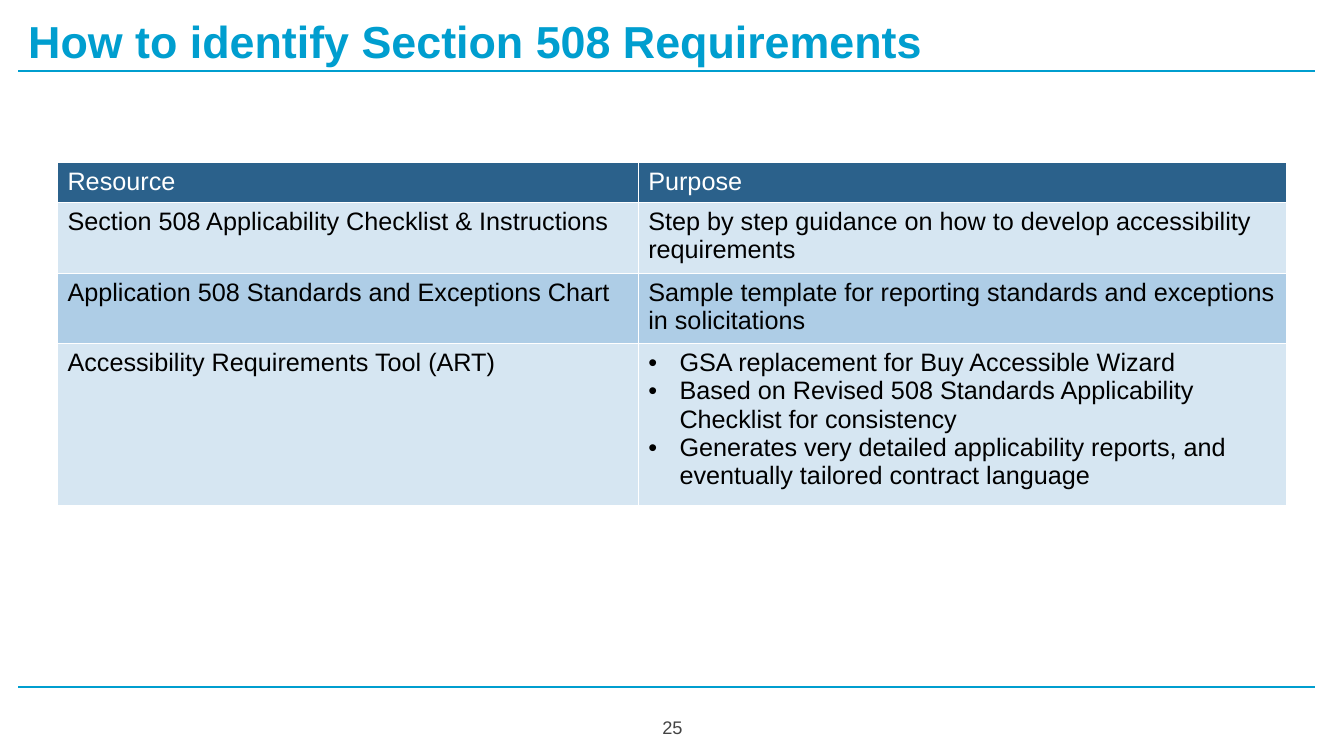
from lxml import etree
from pptx import Presentation
from pptx.dml.color import RGBColor
from pptx.enum.shapes import MSO_CONNECTOR
from pptx.enum.text import MSO_ANCHOR, PP_ALIGN
from pptx.oxml.ns import qn
from pptx.util import Inches, Pt

STRAIGHT = MSO_CONNECTOR.STRAIGHT
TOP, MIDDLE = MSO_ANCHOR.TOP, MSO_ANCHOR.MIDDLE
LEFT, CENTER = PP_ALIGN.LEFT, PP_ALIGN.CENTER

TITLE = "How to identify Section 508 Requirements"
PAGE_NUMBER = "25"
ROWS = [
    ("Resource", "Purpose"),
    ("Section 508 Applicability Checklist & Instructions",
     "Step by step guidance on how to develop accessibility requirements"),
    ("Application 508 Standards and Exceptions Chart",
     "Sample template for reporting standards and exceptions in solicitations"),
    ("Accessibility Requirements Tool (ART)",
     ["GSA replacement for Buy Accessible Wizard",
      "Based on Revised 508 Standards Applicability Checklist for consistency",
      "Generates very detailed applicability reports, and eventually tailored "
      "contract language"]),
]
COLUMN_WIDTHS = [5.76, 6.43]
ROW_HEIGHTS = [0.4, 0.66, 0.66, 1.5]
RULE_LEFT, RULE_RIGHT = 0.18, 13.04
RULE_TOPS = [0.7, 6.82]
BULLET_INDENT = 0.31
COLORS = {
    "accent": "009ECF", "number": "434343", "header": "2B618B",
    "light": "D6E6F2", "medium": "AECDE6", "white": "FFFFFF", "black": "000000",
}


def color(name):
    return RGBColor.from_string(COLORS[name])


def add_bullet(paragraph):
    properties = paragraph._p.get_or_add_pPr()
    properties.set("marL", str(Inches(BULLET_INDENT)))
    properties.set("indent", str(-Inches(BULLET_INDENT)))
    font = etree.SubElement(properties, qn("a:buFont"))
    font.set("typeface", "Arial")
    etree.SubElement(properties, qn("a:buChar")).set("char", "•")


def write(frame, text, size=18, ink="black", bold=False, align=LEFT, anchor=TOP):
    """Fill a text frame; a list of strings becomes a bulleted list."""
    frame.word_wrap = True
    frame.vertical_anchor = anchor
    bulleted = isinstance(text, list)
    for index, line in enumerate(text if bulleted else [text]):
        paragraph = frame.add_paragraph() if index else frame.paragraphs[0]
        if bulleted:
            add_bullet(paragraph)
        paragraph.alignment = align
        run = paragraph.add_run()
        run.text = line
        run.font.name = "Arial"
        run.font.size = Pt(size)
        run.font.bold = bold
        run.font.color.rgb = color(ink)


def add_rule(slide, top):
    rule = slide.shapes.add_connector(
        STRAIGHT, Inches(RULE_LEFT), Inches(top), Inches(RULE_RIGHT), Inches(top))
    rule.line.color.rgb = color("accent")
    rule.line.width = Pt(1.5)
    etree.SubElement(rule._element.spPr, qn("a:effectLst"))


def set_borders(cell):
    properties = cell._tc.get_or_add_tcPr()
    for index, side in enumerate(("lnL", "lnR", "lnT", "lnB")):
        border = etree.Element(qn(f"a:{side}"), w=str(Pt(1)))
        fill = etree.SubElement(border, qn("a:solidFill"))
        etree.SubElement(fill, qn("a:srgbClr")).set("val", COLORS["white"])
        properties.insert(index, border)


def add_resource_table(slide):
    table = slide.shapes.add_table(
        len(ROWS), len(COLUMN_WIDTHS), Inches(0.57), Inches(1.61),
        Inches(sum(COLUMN_WIDTHS)), Inches(sum(ROW_HEIGHTS))).table
    for column, width in zip(table.columns, COLUMN_WIDTHS):
        column.width = Inches(width)
    for row_index, texts in enumerate(ROWS):
        table.rows[row_index].height = Inches(ROW_HEIGHTS[row_index])
        is_header = row_index == 0
        band = "header" if is_header else "light" if row_index % 2 else "medium"
        for column_index, text in enumerate(texts):
            cell = table.cell(row_index, column_index)
            cell.fill.solid()
            cell.fill.fore_color.rgb = color(band)
            set_borders(cell)
            write(cell.text_frame, text, ink="white" if is_header else "black")


def main():
    presentation = Presentation()
    presentation.slide_width = Inches(13.33)
    presentation.slide_height = Inches(7.5)
    slide = presentation.slides.add_slide(presentation.slide_layouts[5])

    for top in RULE_TOPS:
        add_rule(slide, top)

    title = slide.shapes.title
    title.left, title.top = Inches(RULE_LEFT), Inches(0)
    title.width, title.height = Inches(9.78), Inches(0.7)
    title.text_frame.margin_top = Inches(0.14)
    title.text_frame.margin_bottom = Inches(0)
    write(title.text_frame, TITLE, size=32, ink="accent", bold=True)

    number = slide.shapes.add_textbox(
        Inches(6.37), Inches(6.93), Inches(0.6), Inches(0.57))
    write(number.text_frame, PAGE_NUMBER, size=13, ink="number",
          align=CENTER, anchor=MIDDLE)

    add_resource_table(slide)
    presentation.save("out.pptx")


if __name__ == "__main__":
    main()
